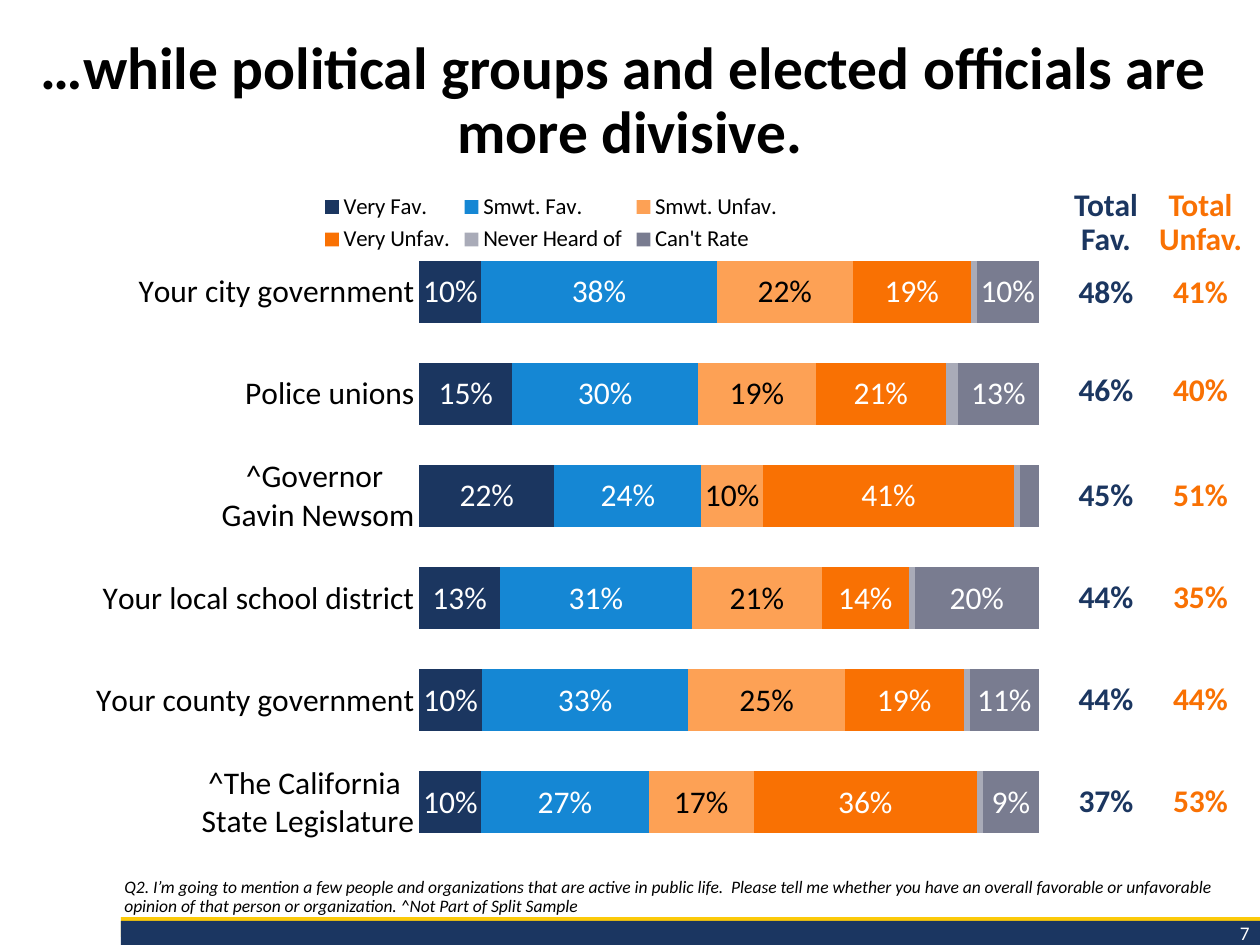
from pptx import Presentation
from pptx.chart.data import CategoryChartData
from pptx.dml.color import RGBColor
from pptx.enum.chart import XL_CHART_TYPE, XL_LABEL_POSITION, XL_LEGEND_POSITION, XL_TICK_MARK
from pptx.enum.shapes import MSO_SHAPE
from pptx.enum.text import MSO_ANCHOR as ANCHOR, PP_ALIGN as ALIGN
from pptx.oxml import parse_xml
from pptx.oxml.ns import nsdecls
from pptx.util import Emu, Pt

FONT = "Calibri"
BLACK = RGBColor(0x00, 0x00, 0x00)
WHITE = RGBColor(0xFF, 0xFF, 0xFF)
GOLD = RGBColor(0xFC, 0xCA, 0x09)
BAND_NAVY = RGBColor(0x1B, 0x36, 0x61)
NAVY = RGBColor(0x1B, 0x36, 0x60)
BLUE = RGBColor(0x15, 0x87, 0xD4)
PEACH = RGBColor(0xFD, 0xA1, 0x55)
ORANGE = RGBColor(0xF9, 0x71, 0x03)
SILVER = RGBColor(0xA9, 0xAB, 0xB8)
SLATE = RGBColor(0x79, 0x7C, 0x90)


def px(*lengths):
    return [Emu(length * 914400 // 126) for length in lengths]


def add_text(page, area, text, size, color, align, anchor, spacing=1.0):
    box = page.shapes.add_textbox(*px(*area))
    frame = box.text_frame
    frame.word_wrap = True
    frame.vertical_anchor = anchor
    para = frame.paragraphs[0]
    para.text = text
    para.alignment = align
    para.line_spacing = spacing
    para.font.name = FONT
    para.font.size = Pt(size)
    para.font.color.rgb = color
    return para


deck = Presentation()
deck.slide_width, deck.slide_height = px(1260, 945)
page = deck.slides.add_slide(deck.slide_layouts[6])

for top, height, color in [(917, 20, GOLD), (921, 24, BAND_NAVY)]:
    band = page.shapes.add_shape(MSO_SHAPE.RECTANGLE, *px(121, top, 1139, height))
    band.shadow.inherit = False
    band.fill.solid()
    band.fill.fore_color.rgb = color
    band.line.fill.background()

add_text(page, (1076, 915, 186, 36), "7", 11, WHITE, ALIGN.RIGHT, ANCHOR.MIDDLE)
question = add_text(
    page, (112, 854, 1145, 68),
    "Q2. I’m going to mention a few people and organizations that are active in public life.  "
    "Please tell me whether you have an overall favorable or unfavorable opinion of that person "
    "or organization. ^Not Part of Split Sample",
    10, BLACK, ALIGN.LEFT, ANCHOR.BOTTOM, 0.9)
question.font.italic = True

ratings = [
    ("Very Fav.", NAVY, WHITE, [0.10, 0.15, 0.22, 0.13, 0.10, 0.10]),
    ("Smwt. Fav.", BLUE, WHITE, [0.38, 0.30, 0.24, 0.31, 0.33, 0.27]),
    ("Smwt. Unfav.", PEACH, BLACK, [0.22, 0.19, 0.10, 0.21, 0.25, 0.17]),
    ("Very Unfav.", ORANGE, WHITE, [0.19, 0.21, 0.41, 0.14, 0.19, 0.36]),
    ("Never Heard of", SILVER, None, [0.01, 0.02, 0.01, 0.01, 0.01, 0.01]),
    ("Can't Rate", SLATE, WHITE, [0.10, 0.13, 0.03, 0.20, 0.11, 0.09]),
]
chart_data = CategoryChartData(number_format="0%")
chart_data.categories = [
    "Your city government", "Police unions", "^Governor\n Gavin Newsom",
    "Your local school district", "Your county government",
    "^The California \nState Legislature",
]
for name, color, label_color, values in ratings:
    chart_data.add_series(name, values)
chart = page.shapes.add_chart(
    XL_CHART_TYPE.BAR_STACKED_100, *px(45, 179, 1012, 718), chart_data).chart
chart.has_title = False
chart.font.name = FONT
chart.font.size = Pt(18)
chart.font.color.rgb = BLACK
chart.has_legend = True
chart.legend.position = XL_LEGEND_POSITION.TOP
chart.legend.include_in_layout = False
chart.legend.font.size = Pt(13)

groups = chart.category_axis
groups.reverse_order = True
groups.major_tick_mark = XL_TICK_MARK.NONE
groups.format.line.fill.background()
groups.tick_labels.font.size = Pt(18)
shares = chart.value_axis
shares.minimum_scale, shares.maximum_scale, shares.major_unit = 0, 1, 0.2
shares.has_major_gridlines = False
shares.visible = False

plot = chart.plots[0]
plot.gap_width, plot.overlap = 65, 100
plot.vary_by_categories = False
for series, (name, color, label_color, values) in zip(plot.series, ratings):
    series.format.fill.solid()
    series.format.fill.fore_color.rgb = color
    if label_color is None:
        continue
    labels = series.data_labels
    labels.show_value = True
    labels.position = XL_LABEL_POSITION.CENTER
    labels.number_format = "0%"
    labels.number_format_is_linked = False
    labels.font.size = Pt(18)
    labels.font.color.rgb = label_color
    for index, value in enumerate(values):
        if value < 0.05:
            labels._element.insert(0, parse_xml(
                f'<c:dLbl {nsdecls("c")}><c:idx val="{index}"/><c:delete val="1"/></c:dLbl>'))

plot_area = chart._chartSpace.chart.plotArea
for old_layout in plot_area.findall("{*}layout"):
    plot_area.remove(old_layout)
plot_area.insert(0, parse_xml(
    f'<c:layout {nsdecls("c")}><c:manualLayout><c:layoutTarget val="inner"/>'
    '<c:xMode val="edge"/><c:yMode val="edge"/><c:x val="0.37"/><c:y val="0.086"/>'
    '<c:w val="0.612"/><c:h val="0.853"/></c:manualLayout></c:layout>'))

totals = [
    ("Total Fav.", "Total Unfav."), ("48%", "41%"), ("46%", "40%"), ("45%", "51%"),
    ("44%", "35%"), ("44%", "44%"), ("37%", "53%"),
]
row_heights = px(60, 53, 98, 106, 102, 102, 102)
table = page.shapes.add_table(len(totals), 2, *px(1063, 191, 189, 623)).table
table.first_row = False
table.horz_banding = False
for column, width in zip(table.columns, px(86, 103)):
    column.width = width
for row, height, texts in zip(table.rows, row_heights, totals):
    row.height = height
    for cell, text, color in zip(row.cells, texts, (NAVY, ORANGE)):
        cell.fill.background()
        cell.vertical_anchor = ANCHOR.BOTTOM
        cell.margin_left, cell.margin_top, cell.margin_right, cell.margin_bottom = px(1, 1, 1, 0)
        para = cell.text_frame.paragraphs[0]
        para.text = text
        para.alignment = ALIGN.CENTER
        if text.startswith("Total"):
            para.line_spacing = Pt(19)
        para.font.name = FONT
        para.font.size = Pt(18)
        para.font.bold = True
        para.font.color.rgb = color

title = add_text(
    page, (0, 25, 1260, 154),
    "…while political groups and elected officials are \vmore divisive.",
    34, BLACK, ALIGN.CENTER, ANCHOR.MIDDLE, 0.9)
title.font.bold = True

deck.save("out.pptx")
